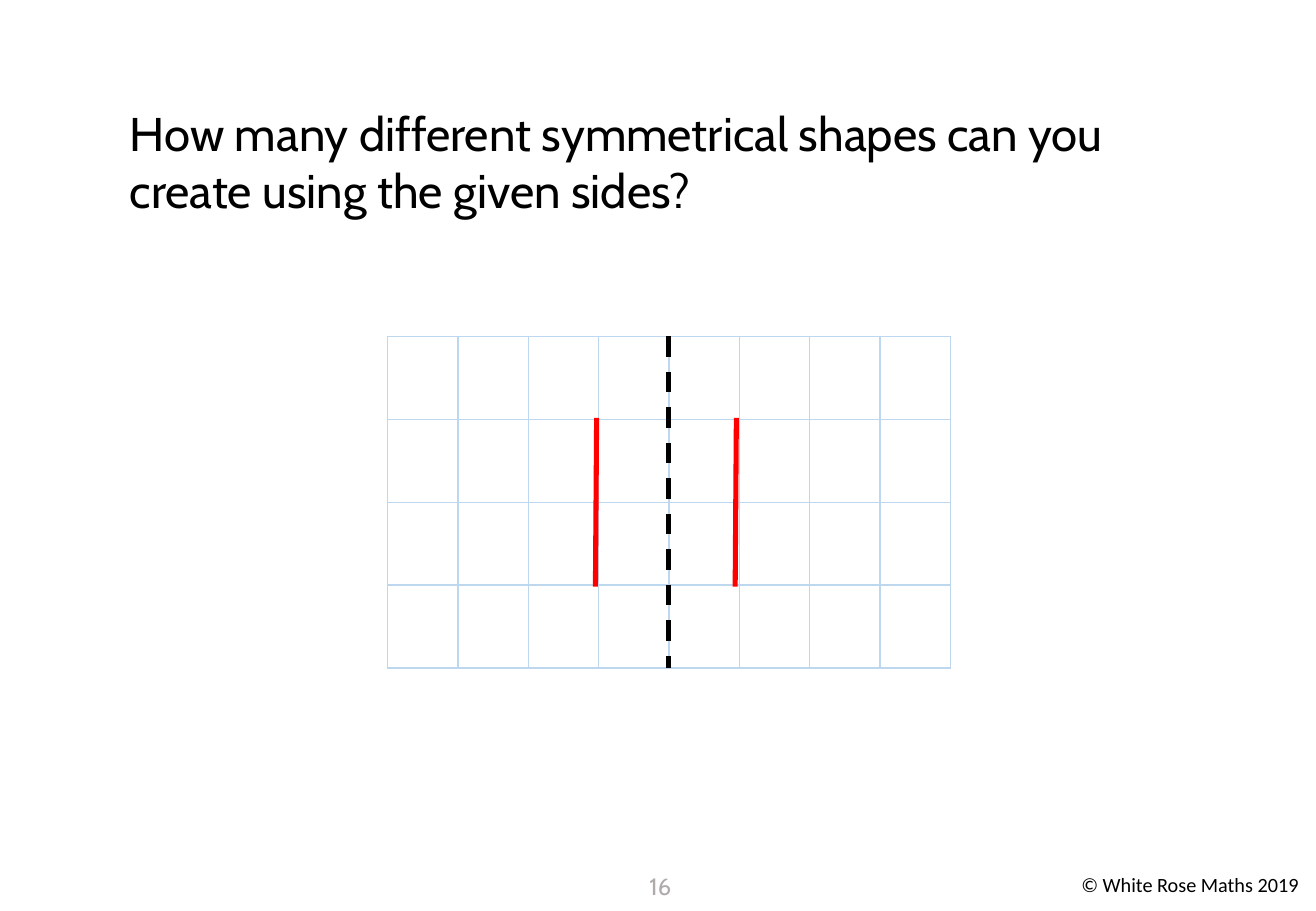
"""Build a slide that asks for symmetrical shapes on a grid."""
from dataclasses import dataclass

from lxml import etree
from pptx import Presentation
from pptx.dml.color import RGBColor
from pptx.enum import dml, shapes, text
from pptx.oxml import ns
from pptx.slide import Slide
from pptx import util as u

PX = 9144
GRID_BLUE = "BDD7EE"
COLUMNS, ROWS = 8, 4


@dataclass(frozen=True)
class Label:
    """A text with its place in px and its font."""
    words: str
    left: int
    top: int
    width: int
    height: int
    size: int
    font: str
    colour: str = "000000"
    align: text.PP_ALIGN = text.PP_ALIGN.LEFT


@dataclass(frozen=True)
class Side:
    """A straight line between two points in px."""
    start: tuple[int, int]
    end: tuple[int, int]
    colour: str
    dashed: bool = False


LABELS = [
    Label("© White Rose Maths 2019", 880, 713, 271, 30, 12, "Calibri"),
    Label("16", 518, 713, 51, 40, 14, "Cabin", "AFABAB", text.PP_ALIGN.CENTER),
    Label("How many different symmetrical shapes can you create using the given sides?",
          97, 81, 881, 135, 28, "Cabin"),
]
SIDES = [
    Side((550, 277), (550, 550), "000000", dashed=True),
    *(Side((x, 344), (x - 1, 483), "FF0000") for x in (491, 606)),
]


def px(length: int) -> u.Emu:
    """Turn px into EMU."""
    return u.Emu(length * PX)


def rgb(colour: str) -> RGBColor:
    """Turn a hex string into a colour."""
    return RGBColor.from_string(colour)


def draw_label(slide: Slide, label: Label) -> None:
    """Draw one wrapped text."""
    box = slide.shapes.add_textbox(
        px(label.left), px(label.top), px(label.width), px(label.height))
    box.text_frame.word_wrap = True
    paragraph = box.text_frame.paragraphs[0]
    paragraph.text = label.words
    paragraph.alignment = label.align
    paragraph.font.size = u.Pt(label.size)
    paragraph.font.name = label.font
    paragraph.font.color.rgb = rgb(label.colour)


def draw_grid(slide: Slide, left: int, top: int, width: int, height: int) -> None:
    """Draw the empty squared grid."""
    grid = slide.shapes.add_table(
        ROWS, COLUMNS, px(left), px(top), px(width), px(height)).table
    grid.first_row = grid.horz_banding = False
    for column in grid.columns:
        column.width = u.Emu(px(width) // COLUMNS)
    for row in grid.rows:
        row.height = u.Emu(px(height) // ROWS)
    for cell in grid.iter_cells():
        properties = cell._tc.get_or_add_tcPr()
        for edge in ("lnL", "lnR", "lnT", "lnB"):
            border = etree.SubElement(properties, ns.qn(f"a:{edge}"), w=str(u.Pt(1)))
            fill = etree.SubElement(border, ns.qn("a:solidFill"))
            etree.SubElement(fill, ns.qn("a:srgbClr"), val=GRID_BLUE)
        cell.fill.background()


def draw_side(slide: Slide, side: Side) -> None:
    """Draw one line without a shadow."""
    line = slide.shapes.add_connector(
        shapes.MSO_CONNECTOR.STRAIGHT, *map(px, side.start + side.end))
    line.line.color.rgb = rgb(side.colour)
    line.line.width = u.Pt(3)
    if side.dashed:
        line.line.dash_style = dml.MSO_LINE.DASH
    etree.SubElement(line._element.spPr, ns.qn("a:effectLst"))


def main() -> None:
    """Build and save the slide."""
    deck = Presentation()
    deck.slide_width, deck.slide_height = px(1083), px(750)
    slide = deck.slides.add_slide(deck.slide_layouts[6])
    for label in LABELS:
        draw_label(slide, label)
    draw_grid(slide, 319, 277, 463, 273)
    for side in SIDES:
        draw_side(slide, side)
    deck.save("out.pptx")


if __name__ == "__main__":
    main()
